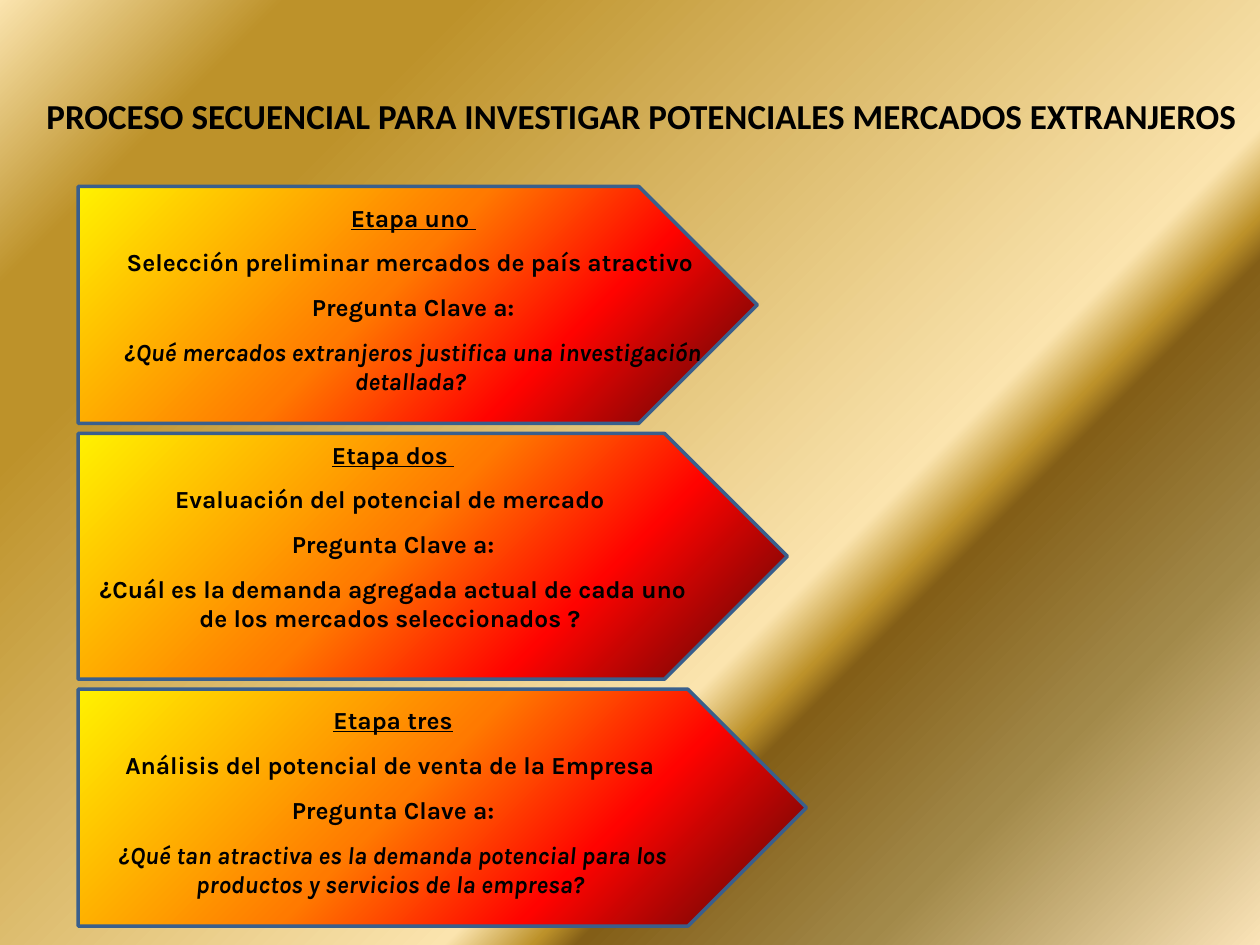
from lxml.etree import SubElement
from pptx import Presentation
from pptx.dml.color import RGBColor
from pptx.enum.shapes import MSO_SHAPE
from pptx.enum.text import MSO_ANCHOR, MSO_AUTO_SIZE, PP_ALIGN
from pptx.oxml.ns import qn
from pptx.util import Inches, Pt

TITLE = "PROCESO SECUENCIAL PARA INVESTIGAR POTENCIALES MERCADOS EXTRANJEROS"
KEY_QUESTION = "Pregunta Clave a:"
STAGES = [
    {
        "arrow": (0.62, 1.48, 5.39, 1.88),
        "text_at": (0.78, 1.56),
        "name": "Etapa uno ",
        "task": "Selección preliminar mercados de país atractivo ",
        "question": "¿Qué mercados extranjeros justifica una investigación detallada? ",
        "italic": True,
    },
    {
        "arrow": (0.62, 3.44, 5.63, 1.95),
        "text_at": (0.62, 3.44),
        "name": "Etapa dos ",
        "task": "Evaluación del potencial de mercado ",
        "question": "¿Cuál es la demanda agregada actual de cada uno de los mercados seleccionados ? ",
        "italic": False,
    },
    {
        "arrow": (0.62, 5.47, 5.78, 1.88),
        "text_at": (0.62, 5.55),
        "name": "Etapa tres",
        "task": "Análisis del potencial de venta de la Empresa ",
        "question": "¿Qué tan atractiva es la demanda potencial para los productos y servicios de la empresa? ",
        "italic": True,
    },
]
TEXT_SIZE = (5, 1.66)

GOLD = [
    (0, "FBE4AE"), (13, "BD922A"), (21, "BD922A"), (63, "FBE4AE"),
    (67, "BD922A"), (69, "835E17"), (82, "A28949"), (100, "FAE3B7"),
]
FIRE = [(0, "FFF200"), (45, "FF7A00"), (70, "FF0300"), (100, "4D0808")]
OUTLINE = "3A5F8C"
TITLE_FONT = {"name": "Calibri", "size": Pt(20), "bold": True}
STAGE_FONT = {"name": "Karla", "size": Pt(14), "bold": True}


def color(value):
    return RGBColor.from_string(value)


def set_gradient(fill, element, stops):
    fill.gradient()
    fill.gradient_angle = 315
    stop_list = next(element.iter(qn("a:gsLst")))
    for old_stop in list(stop_list):
        stop_list.remove(old_stop)
    for position, value in stops:
        stop = SubElement(stop_list, qn("a:gs"), pos=str(position * 1000))
        SubElement(stop, qn("a:srgbClr"), val=value)


def add_arrow(slide, box):
    shape = slide.shapes.add_shape(MSO_SHAPE.PENTAGON, *map(Inches, box))
    shape.shadow.inherit = False
    set_gradient(shape.fill, shape.element, FIRE)
    shape.line.color.rgb = color(OUTLINE)
    shape.line.width = Pt(2)


def add_text(slide, box, lines, base_font, paragraph_format, wrap):
    frame = slide.shapes.add_textbox(*map(Inches, box)).text_frame
    frame.word_wrap = wrap
    frame.auto_size = MSO_AUTO_SIZE.SHAPE_TO_FIT_TEXT
    frame.vertical_anchor = MSO_ANCHOR.TOP
    for index, (text, line_font) in enumerate(lines):
        paragraph = frame.add_paragraph() if index else frame.paragraphs[0]
        for attribute, value in paragraph_format.items():
            setattr(paragraph, attribute, value)
        run = paragraph.add_run()
        run.text = text
        for attribute, value in {**base_font, **line_font}.items():
            setattr(run.font, attribute, value)
        run.font.color.rgb = color("000000")


def main():
    presentation = Presentation()
    presentation.slide_width = Inches(10)
    presentation.slide_height = Inches(7.5)
    slide = presentation.slides.add_slide(presentation.slide_layouts[6])
    set_gradient(slide.background.fill, slide.element, GOLD)

    for stage in reversed(STAGES):
        add_arrow(slide, stage["arrow"])

    add_text(slide, (0.27, 0.7, 9.73, 0.44), [(TITLE, {})], TITLE_FONT, {}, False)

    stage_format = {"alignment": PP_ALIGN.CENTER, "space_before": Pt(8.8)}
    for stage in STAGES:
        lines = [
            (stage["name"], {"underline": True}),
            (stage["task"], {}),
            (KEY_QUESTION, {}),
            (stage["question"], {"italic": stage["italic"]}),
        ]
        add_text(slide, stage["text_at"] + TEXT_SIZE, lines, STAGE_FONT, stage_format, True)

    presentation.save("out.pptx")


if __name__ == "__main__":
    main()
